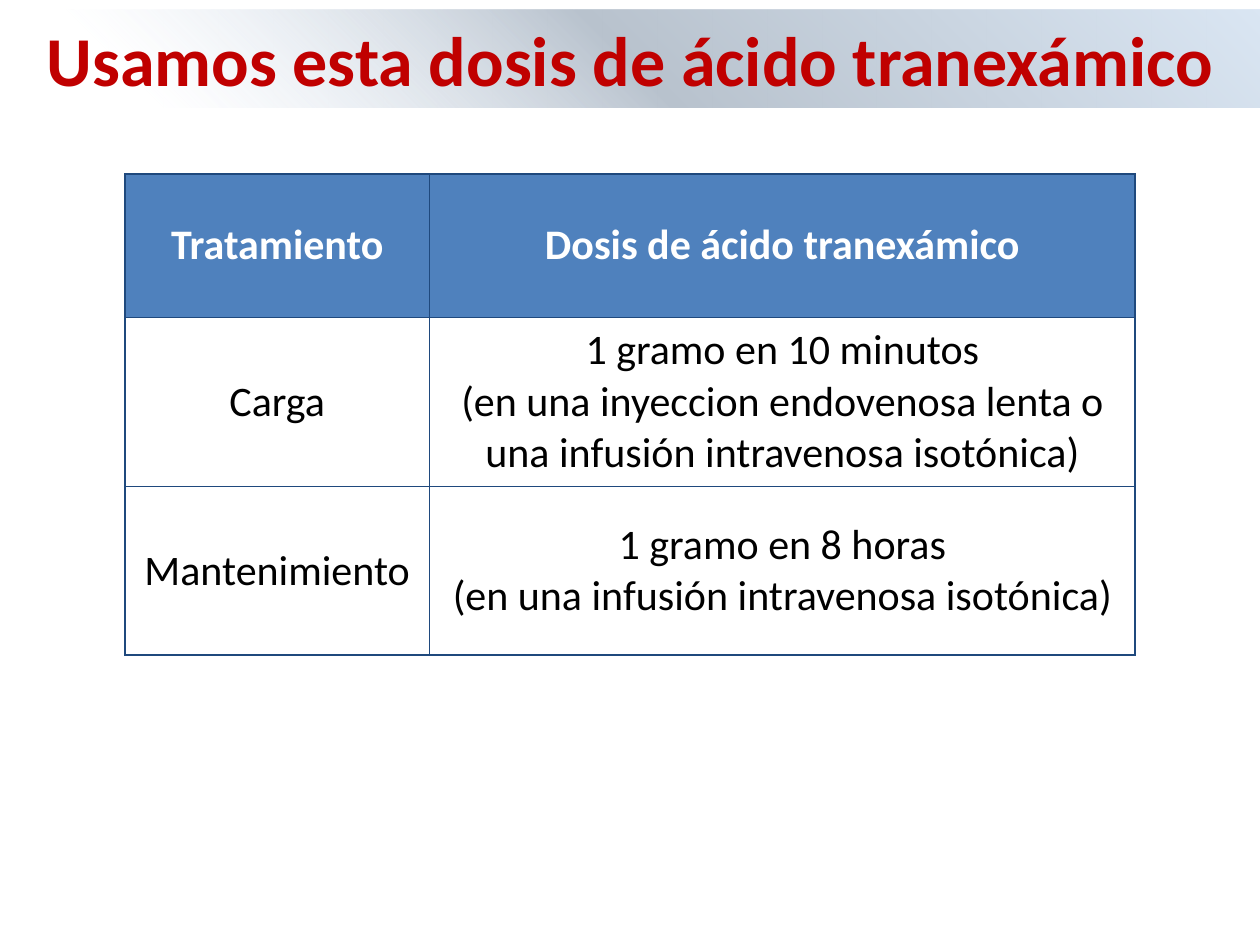
from dataclasses import dataclass

from lxml import etree
from pptx import Presentation
from pptx.dml.color import RGBColor
from pptx.enum.shapes import MSO_SHAPE
from pptx.enum.text import MSO_ANCHOR, MSO_AUTO_SIZE, PP_ALIGN
from pptx.oxml import parse_xml
from pptx.oxml.ns import nsdecls, qn
from pptx.util import Inches, Pt


@dataclass(frozen=True)
class Theme:
    font: str = "Calibri"
    title: str = "C00000"
    header_text: str = "FFFFFF"
    body_text: str = "000000"
    header_fill: str = "4F81BD"
    border: str = "1F497D"
    title_size: int = 40
    table_size: int = 24
    border_width: int = 1
    band_stops: tuple = ((12, "DCE6F2", 0), (50, "B8C2CD", 100), (100, "DAE6F3", 100))
    band_angle: int = 315


THEME = Theme()
TITLE = "Usamos esta dosis de ácido tranexámico"
DOSES = (
    ("Tratamiento", "Dosis de ácido tranexámico"),
    ("Carga", "1 gramo en 10 minutos\n"
              "(en una inyeccion endovenosa lenta o una infusión intravenosa isotónica)"),
    ("Mantenimiento", "1 gramo en 8 horas\n(en una infusión intravenosa isotónica)"),
)


def write_text(tf, text, size, color, bold):
    tf.text = text
    tf.word_wrap = True
    for p in tf.paragraphs:
        p.alignment = PP_ALIGN.CENTER
        p.font.name = THEME.font
        p.font.size = Pt(size)
        p.font.bold = bold
        p.font.color.rgb = RGBColor.from_string(color)


def fill_gradient(sp, stops, angle):
    marks = "".join(
        f'<a:gs pos="{pos * 1000}"><a:srgbClr val="{color}">'
        f'<a:alpha val="{alpha * 1000}"/></a:srgbClr></a:gs>'
        for pos, color, alpha in stops
    )
    grad = parse_xml(
        f'<a:gradFill {nsdecls("a")}><a:gsLst>{marks}</a:gsLst>'
        f'<a:lin ang="{angle * 60000}" scaled="0"/></a:gradFill>'
    )
    sp.fill.background()
    props = sp.fill._xPr
    props.replace(props.find(qn("a:noFill")), grad)


def add_title_band(slide, left, top, width, height):
    sp = slide.shapes.add_shape(MSO_SHAPE.RECTANGLE, left, top, width, height)
    sp.shadow.inherit = False
    sp.line.fill.background()
    fill_gradient(sp, THEME.band_stops, THEME.band_angle)
    write_text(sp.text_frame, TITLE, THEME.title_size, THEME.title, True)
    sp.text_frame.auto_size = MSO_AUTO_SIZE.SHAPE_TO_FIT_TEXT


def set_borders(cell):
    props = cell._tc.get_or_add_tcPr()
    for side in ("lnL", "lnR", "lnT", "lnB"):
        ln = etree.SubElement(props, qn(f"a:{side}"), w=str(Pt(THEME.border_width)))
        fill = etree.SubElement(ln, qn("a:solidFill"))
        etree.SubElement(fill, qn("a:srgbClr"), val=THEME.border)


def style_cell(cell, text, is_header):
    cell.vertical_anchor = MSO_ANCHOR.MIDDLE
    cell.margin_left = cell.margin_right = Inches(0.12)
    cell.margin_top = cell.margin_bottom = Inches(0.06)
    set_borders(cell)
    if is_header:
        cell.fill.solid()
        cell.fill.fore_color.rgb = RGBColor.from_string(THEME.header_fill)
    else:
        cell.fill.background()
    color = THEME.header_text if is_header else THEME.body_text
    write_text(cell.text_frame, text, THEME.table_size, color, is_header)


def add_dose_table(slide, left, top, width, height):
    table = slide.shapes.add_table(len(DOSES), len(DOSES[0]), left, top, width, height).table
    table.horz_banding = False
    label_width, header_height = Inches(2.42), Inches(1.14)
    table.columns[0].width = label_width
    table.columns[1].width = width - label_width
    for i, texts in enumerate(DOSES):
        body_height = (height - header_height) // (len(DOSES) - 1)
        table.rows[i].height = body_height if i else header_height
        for j, text in enumerate(texts):
            style_cell(table.cell(i, j), text, i == 0)


def main():
    prs = Presentation()
    prs.slide_width, prs.slide_height = Inches(10), Inches(7.5)
    slide = prs.slides.add_slide(prs.slide_layouts[6])
    add_dose_table(slide, Inches(0.99), Inches(1.38), Inches(8.02), Inches(3.82))
    add_title_band(slide, Inches(0), Inches(0.08), prs.slide_width, Inches(0.77))
    prs.save("out.pptx")


if __name__ == "__main__":
    main()
